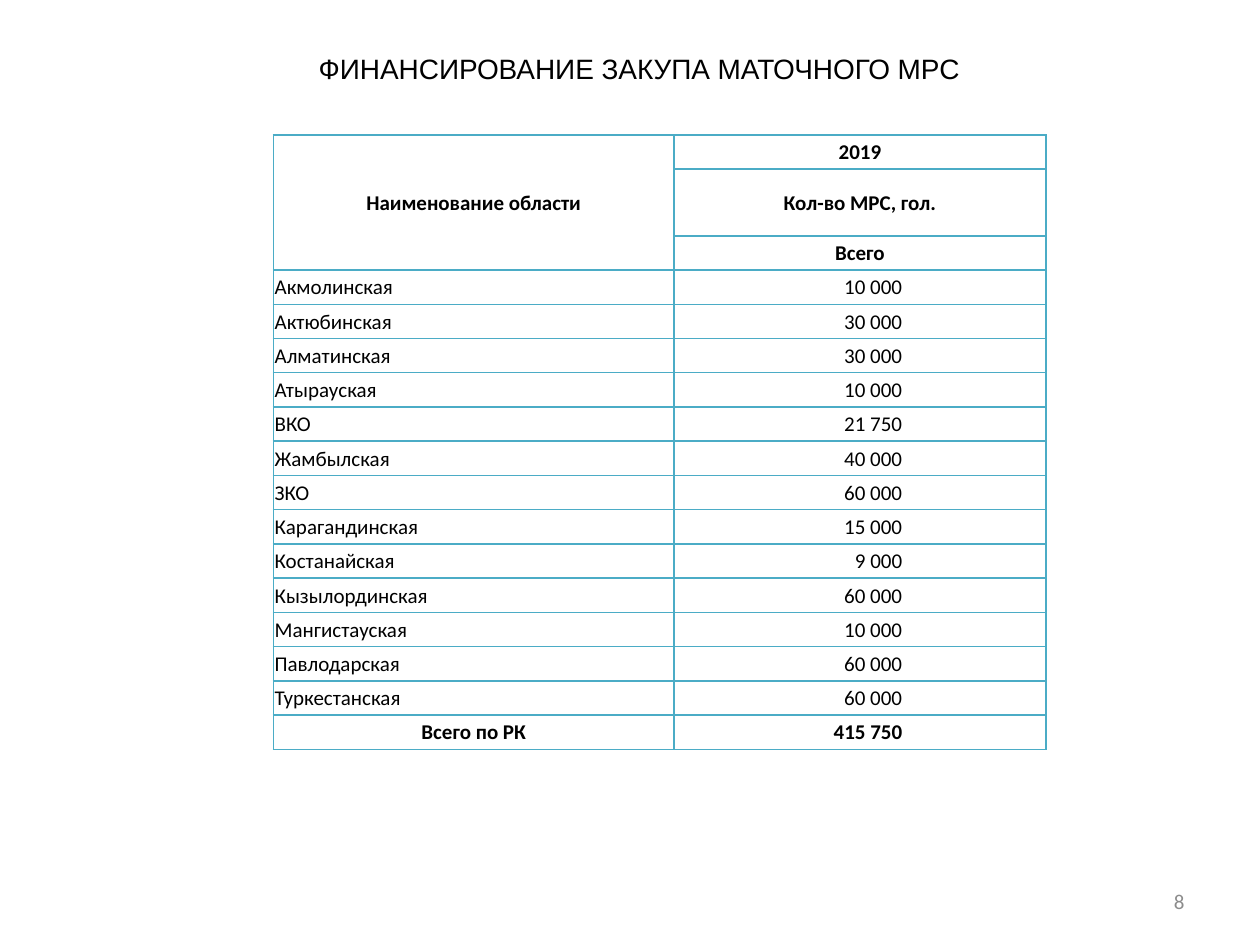
from lxml.etree import SubElement
from pptx import Presentation
from pptx.dml.color import RGBColor
from pptx.enum.text import MSO_ANCHOR, PP_ALIGN
from pptx.oxml.ns import qn
from pptx.util import Inches, Pt

TITLE = "ФИНАНСИРОВАНИЕ ЗАКУПА МАТОЧНОГО МРС"
PAGE_NUMBER = "8"
HEADER = [
    ("Наименование области", "2019"),
    ("", "Кол-во МРС, гол."),
    ("", "Всего"),
]
REGIONS = [
    ("Акмолинская", "10 000"),
    ("Актюбинская", "30 000"),
    ("Алматинская", "30 000"),
    ("Атырауская", "10 000"),
    ("ВКО", "21 750"),
    ("Жамбылская", "40 000"),
    ("ЗКО", "60 000"),
    ("Карагандинская", "15 000"),
    ("Костанайская", "9 000"),
    ("Кызылординская", "60 000"),
    ("Мангистауская", "10 000"),
    ("Павлодарская", "60 000"),
    ("Туркестанская", "60 000"),
]
TOTAL = ("Всего по РК", "415 750")

BLACK = RGBColor(0, 0, 0)
GRAY = RGBColor(0x8C, 0x8C, 0x8C)
TEAL = RGBColor(0x4B, 0xAC, 0xC6)

COLUMN_WIDTHS = (3.18, 2.95)
TABLE_HEIGHT = 4.88
TALL_ROW, TALL_HEIGHT = 1, 0.53
NUMBER_MARGIN = 1.14


def format_text(tf, size, font, color, align, bold=False):
    tf.vertical_anchor = MSO_ANCHOR.MIDDLE
    p = tf.paragraphs[0]
    p.alignment = align
    for r in p.runs:
        r.font.size = Pt(size)
        r.font.name = font
        r.font.bold = bold
        r.font.color.rgb = color


def set_borders(cell, color, width):
    tc_pr = cell._tc.get_or_add_tcPr()
    for i, side in enumerate(("lnL", "lnR", "lnT", "lnB")):
        ln = SubElement(tc_pr, qn(f"a:{side}"), w=str(Pt(width)))
        fill = SubElement(ln, qn("a:solidFill"))
        SubElement(fill, qn("a:srgbClr"), val=str(color))
        tc_pr.insert(i, ln)


def add_title(s):
    title = s.shapes.title
    title.left, title.top = Inches(0.31), Inches(0.21)
    title.width, title.height = Inches(9.53), Inches(0.7)
    tf = title.text_frame
    tf.text = TITLE
    tf.margin_left = tf.margin_right = Inches(0.08)
    tf.margin_top = tf.margin_bottom = Inches(0.04)
    tf.paragraphs[0].line_spacing = 0.9
    format_text(tf, 16, "Arial", BLACK, PP_ALIGN.CENTER)


def add_page_number(s):
    box = s.shapes.add_textbox(Inches(7.17), Inches(6.95), Inches(2.33), Inches(0.4))
    tf = box.text_frame
    tf.word_wrap = True
    tf.text = PAGE_NUMBER
    format_text(tf, 12, "Calibri", GRAY, PP_ALIGN.RIGHT)


def add_region_table(s):
    rows = HEADER + REGIONS + [TOTAL]
    frame = s.shapes.add_table(len(rows), len(COLUMN_WIDTHS), Inches(2.17), Inches(1.07),
                               Inches(sum(COLUMN_WIDTHS)), Inches(TABLE_HEIGHT))
    table = frame.table
    table.first_row = table.horz_banding = False
    for column, width in zip(table.columns, COLUMN_WIDTHS):
        column.width = Inches(width)
    row_height = (TABLE_HEIGHT - TALL_HEIGHT) / (len(rows) - 1)

    for i, row in enumerate(rows):
        table.rows[i].height = Inches(TALL_HEIGHT if i == TALL_ROW else row_height)
        is_header, is_total = i < len(HEADER), i == len(rows) - 1
        for j, text in enumerate(row):
            cell = table.cell(i, j)
            cell.text = text
            cell.margin_left = cell.margin_right = cell.margin_top = Inches(0.01)
            cell.margin_bottom = 0
            cell.vertical_anchor = MSO_ANCHOR.MIDDLE
            if is_header or (is_total and j == 0):
                align = PP_ALIGN.CENTER
            elif j == 0:
                align = PP_ALIGN.LEFT
            else:
                align = PP_ALIGN.RIGHT
                cell.margin_right = Inches(NUMBER_MARGIN)
            format_text(cell.text_frame, 12, "Calibri", BLACK, align, is_header or is_total)
            cell.fill.background()
            set_borders(cell, TEAL, 1)
    table.cell(0, 0).merge(table.cell(len(HEADER) - 1, 0))


def main():
    prs = Presentation()
    prs.slide_width, prs.slide_height = Inches(10), Inches(7.5)
    s = prs.slides.add_slide(prs.slide_layouts[5])
    add_page_number(s)
    add_title(s)
    add_region_table(s)
    prs.save("out.pptx")


if __name__ == "__main__":
    main()
